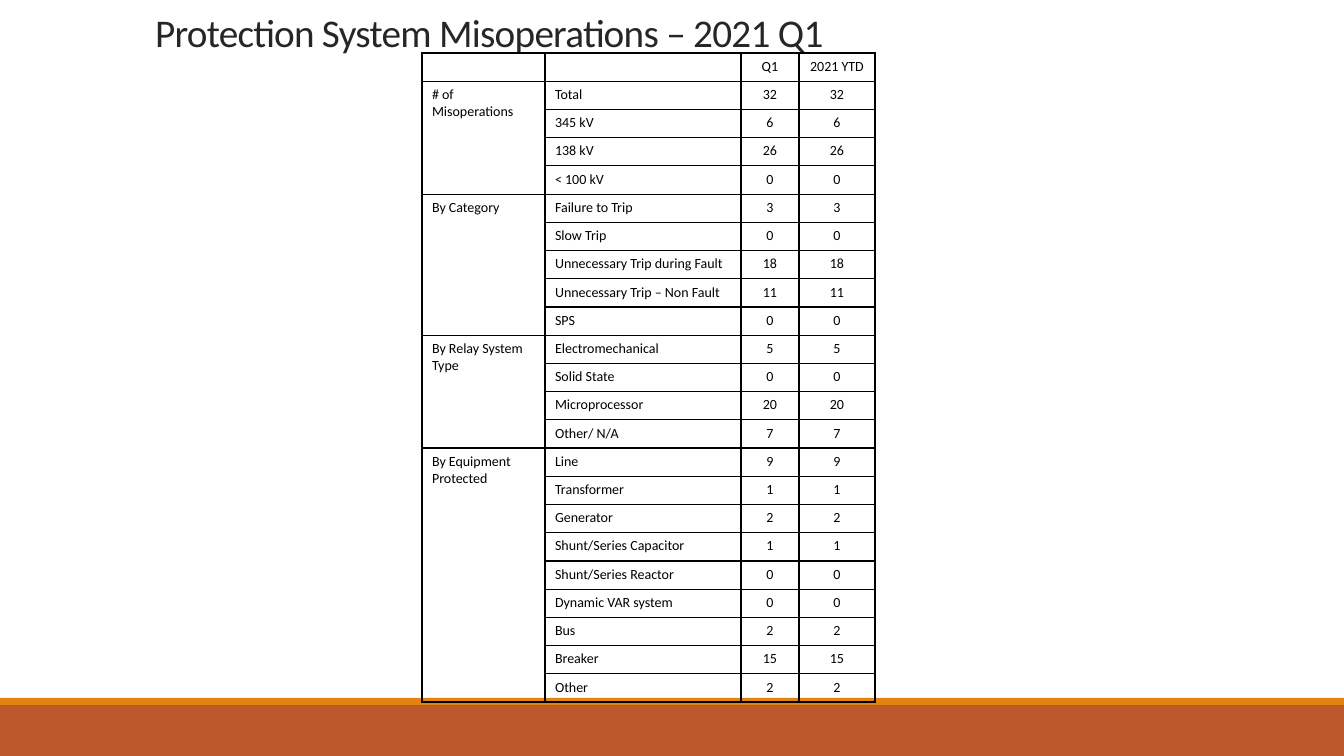
from lxml import etree
from pptx import Presentation
from pptx.dml.color import RGBColor
from pptx.enum.shapes import MSO_SHAPE
from pptx.enum.text import MSO_ANCHOR, MSO_AUTO_SIZE, PP_ALIGN
from pptx.oxml.ns import qn
from pptx.util import Pt

EMU_PER_PX = 914400 / 100.8
RECT = MSO_SHAPE.RECTANGLE
LEFT, CENTER = PP_ALIGN.LEFT, PP_ALIGN.CENTER
BOTTOM = MSO_ANCHOR.BOTTOM
NO_AUTOFIT = MSO_AUTO_SIZE.NONE
FONT = "Calibri"
COL_WIDTHS = [123, 196, 58, 76]
HEADER = ["", "", "Q1", "2021 YTD"]
GROUPS = [
    ("# of Misoperations", [
        ("Total", 32), ("345 kV", 6), ("138 kV", 26), ("< 100 kV", 0)]),
    ("By Category", [
        ("Failure to Trip", 3), ("Slow Trip", 0),
        ("Unnecessary Trip during Fault", 18),
        ("Unnecessary Trip – Non Fault", 11), ("SPS", 0)]),
    ("By Relay System Type", [
        ("Electromechanical", 5), ("Solid State", 0),
        ("Microprocessor", 20), ("Other/ N/A", 7)]),
    ("By Equipment Protected", [
        ("Line", 9), ("Transformer", 1), ("Generator", 2),
        ("Shunt/Series Capacitor", 1), ("Shunt/Series Reactor", 0),
        ("Dynamic VAR system", 0), ("Bus", 2), ("Breaker", 15), ("Other", 2)]),
]


def px(n):
    """Turn pixels into EMU."""
    return round(n * EMU_PER_PX)


def rgb(value):
    """Turn a hex string into a colour."""
    return RGBColor.from_string(value)


def write_text(tf, text, size=10, color="000000", align=LEFT, line=None, spacing=None):
    """Write one formatted paragraph into a text frame."""
    p = tf.paragraphs[0]
    p.alignment = align
    if line:
        p.line_spacing = line
    if not text:
        etree.SubElement(p._p, qn("a:endParaRPr"), sz=str(size * 100))
        return
    r = p.add_run()
    r.text = text
    r.font.name, r.font.size, r.font.bold = FONT, Pt(size), False
    r.font.color.rgb = rgb(color)
    if spacing is not None:
        r._r.get_or_add_rPr().set("spc", str(round(spacing * 100)))


def add_band(s, x, y, w, h, color):
    """Draw one plain coloured band."""
    sp = s.shapes.add_shape(RECT, px(x), px(y), px(w), px(h))
    sp.shadow.inherit = False
    sp.fill.solid()
    sp.fill.fore_color.rgb = rgb(color)
    sp.line.fill.background()


def add_footer(s, x, y, w, h):
    """Draw the footer with its accent stripe on top."""
    stripe = 7
    add_band(s, x, y + stripe, w, h - stripe, "BD582C")
    add_band(s, x, y, w, stripe, "E48312")


def add_title(s, x, y, w, h, text):
    """Place and format the title placeholder."""
    sp = s.shapes.title
    sp.left, sp.top, sp.width, sp.height = px(x), px(y), px(w), px(h)
    tf = sp.text_frame
    tf.word_wrap = True
    tf.auto_size = NO_AUTOFIT
    tf.vertical_anchor = BOTTOM
    write_text(tf, text, size=28, color="262626", line=0.85, spacing=-0.5)


def format_cell(cell):
    """Give a cell black borders and no fill."""
    tcPr = cell._tc.get_or_add_tcPr()
    for side in ("a:lnL", "a:lnR", "a:lnT", "a:lnB"):
        ln = etree.SubElement(tcPr, qn(side), w=str(Pt(1)))
        fill = etree.SubElement(ln, qn("a:solidFill"))
        etree.SubElement(fill, qn("a:srgbClr"), val="000000")
    cell.fill.background()


def add_misoperations(s, x, y, w, h):
    """Build the table of misoperations with one merged label per group."""
    rows = [HEADER]
    spans = []
    for group, items in GROUPS:
        spans.append((len(rows), len(rows) + len(items) - 1))
        for i, (name, count) in enumerate(items):
            rows.append(["" if i else group, name, str(count), str(count)])
    frame = s.shapes.add_table(len(rows), len(HEADER), px(x), px(y), px(w), px(h))
    table = frame.table
    table.first_row = table.horz_banding = False
    for column, width in zip(table.columns, COL_WIDTHS):
        column.width = px(width)
    for r, values in enumerate(rows):
        table.rows[r].height = px(h / len(rows))
        for c, value in enumerate(values):
            cell = table.cell(r, c)
            format_cell(cell)
            write_text(cell.text_frame, value, align=CENTER if c > 1 else LEFT)
    for first, last in spans:
        table.cell(first, 0).merge(table.cell(last, 0))


def main():
    """Build the slide and save it."""
    prs = Presentation()
    prs.slide_width, prs.slide_height = px(1344), px(756)
    s = prs.slides.add_slide(prs.slide_layouts[0])
    subtitle = s.placeholders[1].element
    subtitle.getparent().remove(subtitle)
    add_footer(s, 0, 698, 1344, 58)
    add_misoperations(s, 422, 53, sum(COL_WIDTHS), 649)
    add_title(s, 145, -40, 917, 101, "Protection System Misoperations – 2021 Q1")
    prs.save("out.pptx")


if __name__ == "__main__":
    main()
